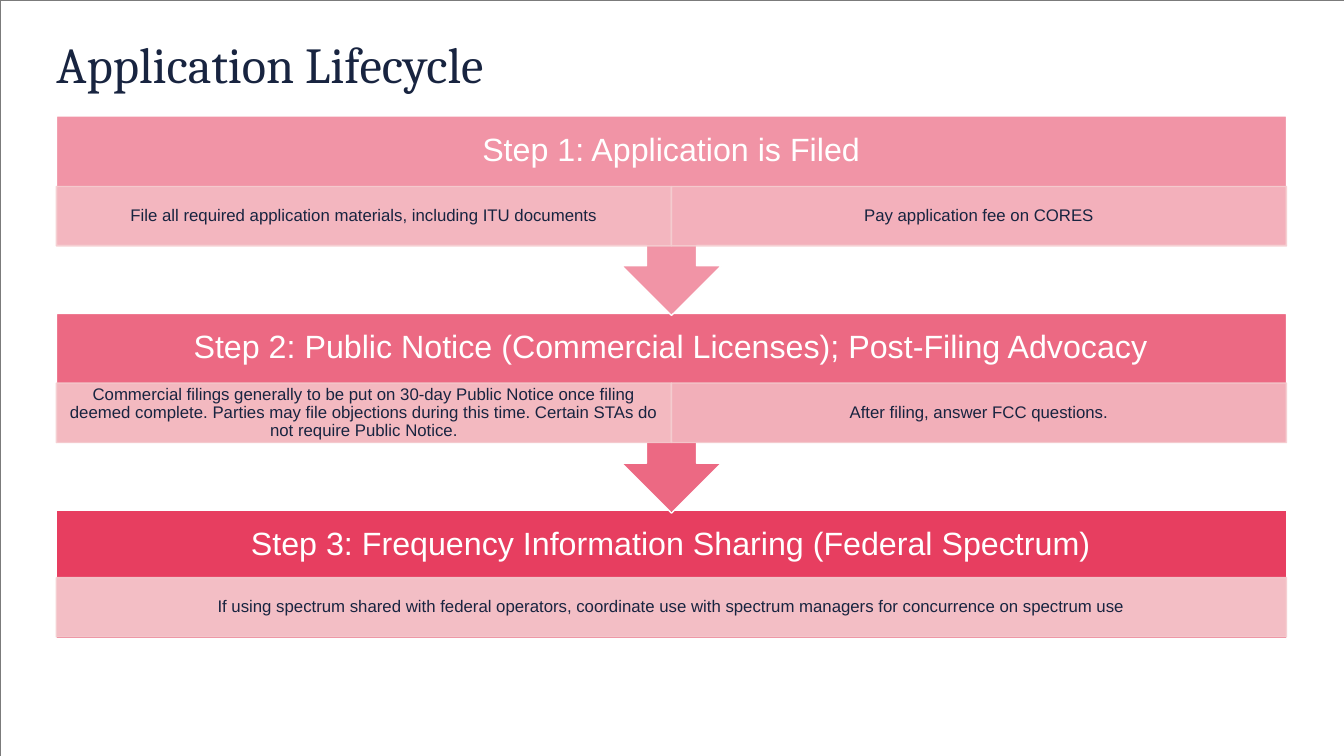
from dataclasses import dataclass

import pptx
import pptx.util
from lxml import etree
from pptx.dml.color import RGBColor
from pptx.enum.shapes import MSO_SHAPE
from pptx.enum.text import MSO_ANCHOR, MSO_AUTO_SIZE, PP_ALIGN
from pptx.oxml.ns import qn
from pptx.util import Inches, Pt

NAVY = RGBColor(0x18, 0x24, 0x40)
RED = RGBColor(0xE5, 0x2A, 0x4F)
PINK = RGBColor(0xF5, 0xCD, 0xD0)
WHITE = RGBColor(0xFF, 0xFF, 0xFF)
GRAY = RGBColor(0x7B, 0x7B, 0x7B)

SLIDE_W, SLIDE_H = 13.33, 7.5
LEFT, WIDTH = 0.56, 12.2
HEADER_H, CELL_H = 0.69, 0.59
CALLOUT_H, LAST_H = 1.98, 1.28


@dataclass
class Cell:
    text: str
    opacity: int


@dataclass
class Step:
    title: str
    top: float
    cell_top: float
    opacity: int
    cells: list[Cell]
    arrow: bool = True


STEPS = [
    Step("Step 1: Application is Filed", 1.15, 1.85, 50, [
        Cell("File all required application materials, including ITU documents", 60),
        Cell("Pay application fee on CORES", 50),
    ]),
    Step("Step 2: Public Notice (Commercial Licenses); Post-Filing Advocacy", 3.11, 3.8, 70, [
        Cell("Commercial filings generally to be put on 30-day Public Notice once filing "
             "deemed complete. Parties may file objections during this time. "
             "Certain STAs do not require Public Notice.", 80),
        Cell("After filing, answer FCC questions.", 70),
    ]),
    Step("Step 3: Frequency Information Sharing (Federal Spectrum)", 5.06, 5.73, 90, [
        Cell("If using spectrum shared with federal operators, coordinate use with "
             "spectrum managers for concurrence on spectrum use", 90),
    ], arrow=False),
]


def set_opacity(fill, percent: int) -> None:
    """Make a solid fill, of a shape or of its line, partly transparent."""
    clr = fill._xPr.find(qn("a:solidFill"))[0]
    etree.SubElement(clr, qn("a:alpha")).set("val", str(percent * 1000))


def add_box(s, kind: MSO_SHAPE, x: float, y: float, w: float, h: float, *,
            fill: RGBColor | None = None, opacity: int = 100,
            line: RGBColor = WHITE, line_width: float = 1, line_opacity: int = 100):
    sp = s.shapes.add_shape(kind, Inches(x), Inches(y), Inches(w), Inches(h))
    sp.shadow.inherit = False
    if fill is None:
        sp.fill.background()
    else:
        sp.fill.solid()
        sp.fill.fore_color.rgb = fill
        set_opacity(sp.fill, opacity)
    sp.line.color.rgb = line
    sp.line.width = Pt(line_width)
    set_opacity(sp.line.fill, line_opacity)
    return sp


def write(sp, text: str, *, size: float, color: RGBColor, font: str = "Arial",
          align: PP_ALIGN = PP_ALIGN.CENTER, anchor: MSO_ANCHOR = MSO_ANCHOR.MIDDLE,
          inset_x: float = 0, inset_y: float = 0) -> None:
    tf = sp.text_frame
    tf.word_wrap = True
    tf.auto_size = MSO_AUTO_SIZE.NONE
    tf.vertical_anchor = anchor
    tf.margin_left = tf.margin_right = Inches(inset_x)
    tf.margin_top = tf.margin_bottom = Inches(inset_y)
    p = tf.paragraphs[0]
    p.alignment = align
    p.line_spacing = 0.9
    r = p.add_run()
    r.text = text
    r.font.name = font
    r.font.size = Pt(size)
    r.font.color.rgb = color


def add_step(s, step: Step) -> None:
    kind, height = ((MSO_SHAPE.UP_ARROW_CALLOUT, CALLOUT_H) if step.arrow
                    else (MSO_SHAPE.RECTANGLE, LAST_H))
    sp = add_box(s, kind, LEFT, step.top, WIDTH, height, fill=RED, opacity=step.opacity)
    sp.rotation = 180 if step.arrow else 0

    header = s.shapes.add_textbox(Inches(LEFT), Inches(step.top),
                                  Inches(WIDTH), Inches(HEADER_H))
    write(header, step.title, size=23, color=WHITE, inset_x=0.18, inset_y=0.18)

    cell_w = WIDTH / len(step.cells)
    for i, cell in enumerate(step.cells):
        sp = add_box(s, MSO_SHAPE.RECTANGLE, LEFT + i * cell_w, step.cell_top, cell_w, CELL_H,
                     fill=PINK, opacity=cell.opacity, line=PINK, line_opacity=90)
        write(sp, cell.text, size=12, color=NAVY, inset_x=0.09, inset_y=0.02)


def main() -> None:
    prs = pptx.Presentation()
    prs.slide_width, prs.slide_height = Inches(SLIDE_W), Inches(SLIDE_H)
    s = prs.slides.add_slide(prs.slide_layouts[5])

    title = s.shapes.title
    title.left, title.top = Inches(LEFT), Inches(0.4)
    title.width, title.height = Inches(WIDTH), Inches(0.63)
    write(title, "Application Lifecycle", size=36, color=NAVY, font="Cambria",
          align=PP_ALIGN.LEFT, anchor=MSO_ANCHOR.TOP)

    add_box(s, MSO_SHAPE.RECTANGLE, 0, 0, SLIDE_W, SLIDE_H, line=GRAY, line_width=0.15)
    for step in reversed(STEPS):
        add_step(s, step)

    prs.save("out.pptx")


if __name__ == "__main__":
    main()
